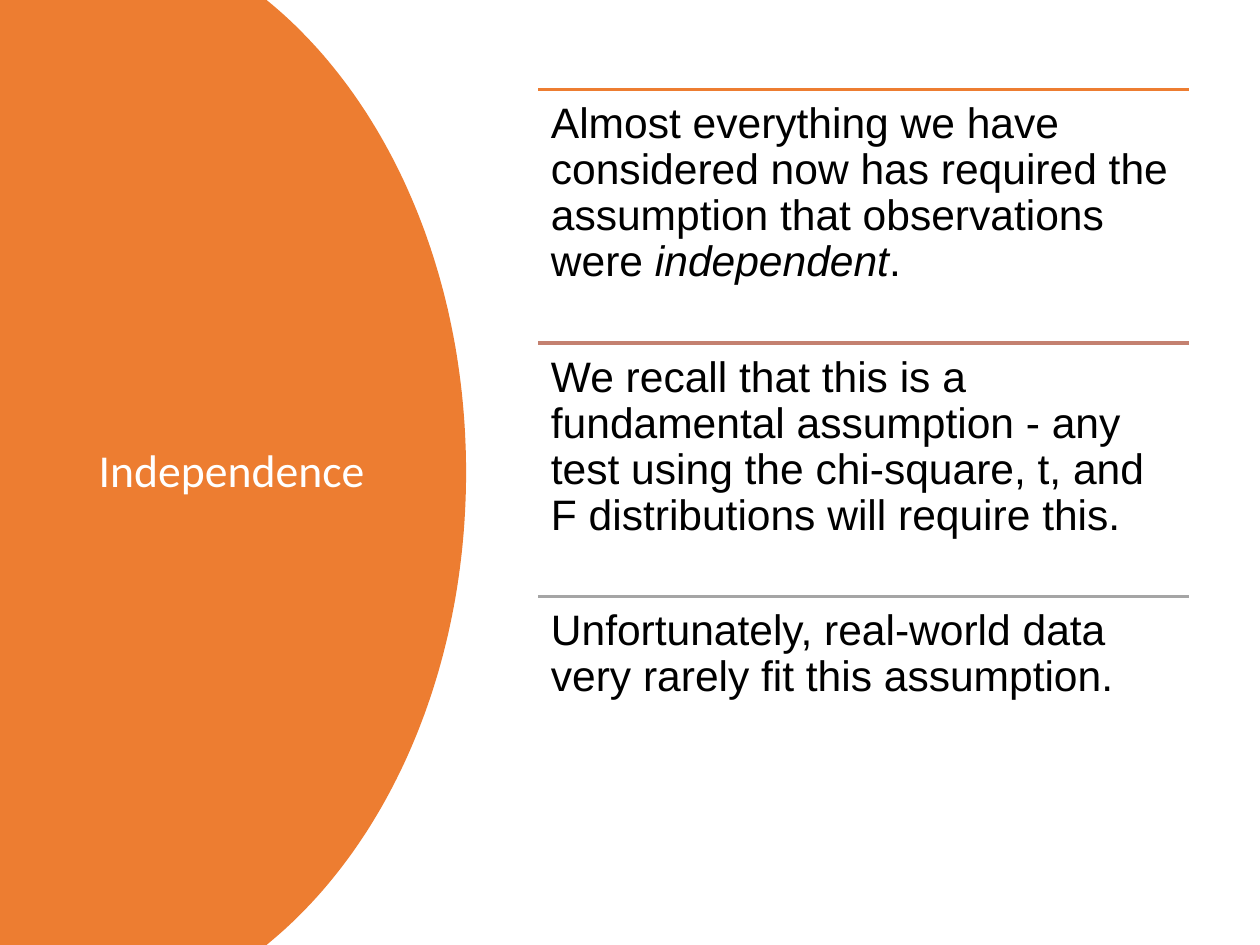
"""Build the Independence slide: a curved title panel beside three ruled statements."""
from lxml.etree import SubElement
from pptx import Presentation
from pptx.dml.color import RGBColor
from pptx.enum.shapes import MSO_CONNECTOR as Connector
from pptx.enum.text import MSO_ANCHOR as Anchor, MSO_AUTO_SIZE as AutoSize, PP_ALIGN as Align
from pptx.oxml.ns import qn
from pptx.util import Cm, Pt

COLORS = {"panel": "ED7D31", "clay": "C48170", "gray": "A5A5A5",
          "title": "FFFFFF", "text": "000000"}
TITLE = "Independence"
STATEMENTS = [
    ("panel", [("Almost everything we have considered now has required the "
                "assumption that observations were ", False),
               ("independent", True), (".", False)]),
    ("clay", [("We recall that this is a fundamental assumption - any test using the "
               "chi-square, t, and F distributions will require this.", False)]),
    ("gray", [("Unfortunately, real-world data very rarely fit this assumption.", False)]),
]
TITLE_FONT = {"name": "Calibri", "size": Pt(29), "bold": False}
TEXT_FONT = {"name": "Arial", "size": Pt(27)}
FRAME = {"word_wrap": True, "auto_size": AutoSize.NONE, "margin_left": Cm(0.28),
         "margin_right": Cm(0.28), "margin_top": Cm(0.28), "margin_bottom": Cm(0.28)}
PARAGRAPH = {"alignment": Align.LEFT, "line_spacing": 0.9}

SLIDE_WIDTH, SLIDE_HEIGHT = 28.22, 21.16
UPPER_CURVE = [(5.97, 0), (8.66, 2.18), (10.44, 6.1), (10.44, SLIDE_HEIGHT / 2)]
CURVE_STEPS = 60
TITLE_BOX = {"left": Cm(1.93), "top": Cm(1.98), "width": Cm(6.83), "height": Cm(17.2)}
LIST_LEFT, LIST_TOP, LIST_WIDTH, ROW_HEIGHT = 12.06, 2, 14.56, 5.68


def color(name):
    return RGBColor.from_string(COLORS[name])


def apply(target, values):
    for name, value in values.items():
        setattr(target, name, value)


def curve_point(step):
    t = step / CURVE_STEPS
    weights = ((1 - t) ** 3, 3 * t * (1 - t) ** 2, 3 * t ** 2 * (1 - t), t ** 3)
    return tuple(sum(weight * point[axis] for weight, point in zip(weights, UPPER_CURVE))
                 for axis in (0, 1))


def write(frame, spans, font, color_name):
    apply(frame, FRAME)
    para = frame.paragraphs[0]
    apply(para, PARAGRAPH)
    for text, italic in spans:
        span = para.add_run()
        span.text = text
        apply(span.font, {**font, "italic": italic})
        span.font.color.rgb = color(color_name)


def add_panel(page):
    upper = [curve_point(step) for step in range(CURVE_STEPS + 1)]
    lower = [(x, SLIDE_HEIGHT - y) for x, y in reversed(upper[:-1])]
    outline = [(Cm(x), Cm(y)) for x, y in upper + lower + [(0, SLIDE_HEIGHT)]]
    builder = page.shapes.build_freeform(0, 0)
    builder.add_line_segments(outline, close=True)
    panel = builder.convert_to_shape()
    panel.shadow.inherit = False
    panel.fill.solid()
    panel.fill.fore_color.rgb = color("panel")
    panel.line.fill.background()
    return panel


def add_title(page):
    title = page.shapes.title
    apply(title, TITLE_BOX)
    title.text_frame.vertical_anchor = Anchor.MIDDLE
    write(title.text_frame, [(TITLE, False)], TITLE_FONT, "title")
    return title


def add_statements(page):
    group = page.shapes.add_group_shape()
    left, width, height = Cm(LIST_LEFT), Cm(LIST_WIDTH), Cm(ROW_HEIGHT)
    for row, (rule_color, spans) in enumerate(STATEMENTS):
        top = Cm(LIST_TOP + row * ROW_HEIGHT)
        rule = group.shapes.add_connector(Connector.STRAIGHT, left, top, left + width, top)
        rule.line.color.rgb = color(rule_color)
        rule.line.width = Pt(2)
        SubElement(rule.element.spPr, qn("a:effectLst"))
        box = group.shapes.add_textbox(left, top, width, height)
        write(box.text_frame, spans, TEXT_FONT, "text")


def main():
    deck = Presentation()
    deck.slide_width, deck.slide_height = Cm(SLIDE_WIDTH), Cm(SLIDE_HEIGHT)
    page = deck.slides.add_slide(deck.slide_layouts[5])
    title = add_title(page)
    panel = add_panel(page)
    title.element.addprevious(panel.element)
    add_statements(page)
    deck.save("out.pptx")


if __name__ == "__main__":
    main()
